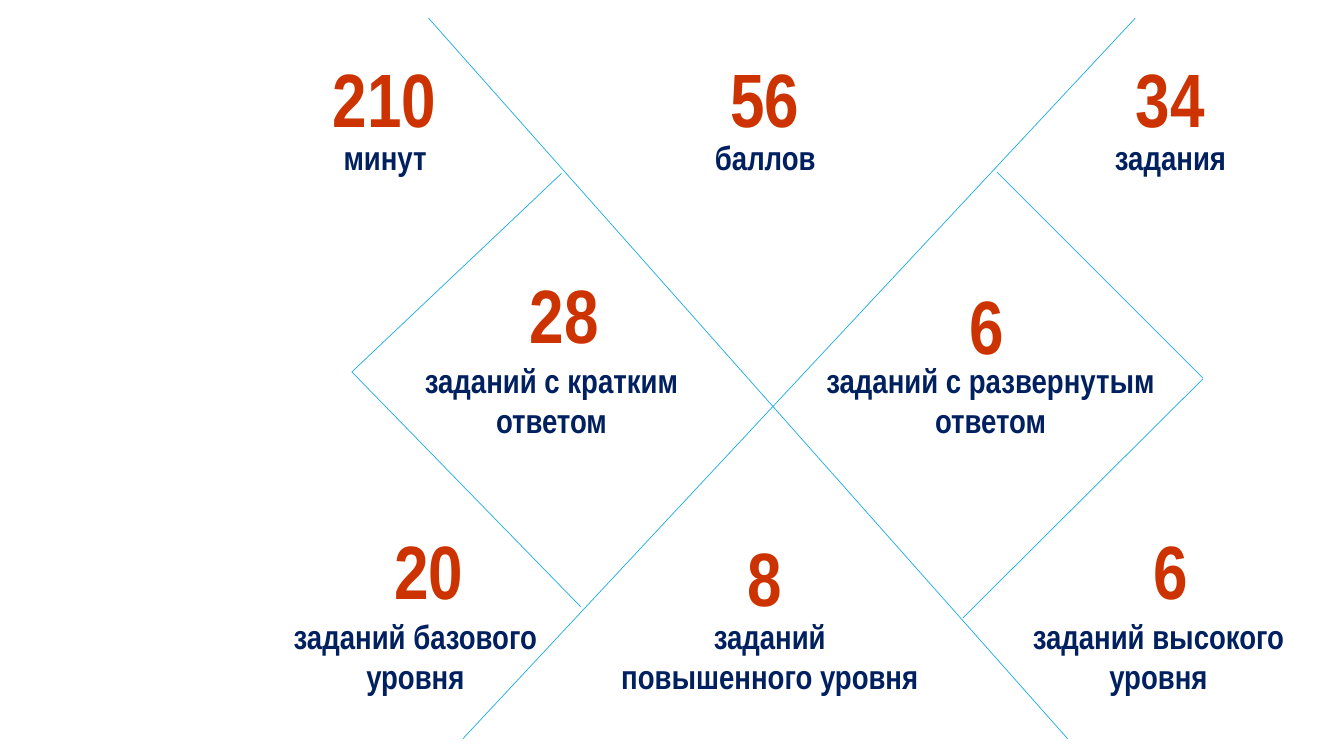
from dataclasses import dataclass

from lxml import etree
from pptx import Presentation
from pptx.dml.color import RGBColor
from pptx.enum import shapes, text
from pptx.oxml import ns
from pptx.util import Inches, Pt


@dataclass(frozen=True)
class Theme:
    font: str = "Arial Narrow"
    number: str = "CC3300"
    number_outline: str = "C00000"
    label: str = "002060"
    rule: str = "1CADE4"
    number_size: int = 54
    label_size: int = 24
    outline_width: float = 1
    rule_width: float = 0.5


THEME = Theme()
NUMBER_WIDTH, NUMBER_HEIGHT = 1.33, 1.01

# number, its left and top; caption, its left, top, width and height
FACTS = [
    ("210", 3.15, 0.47, "минут", 3.02, 1.31, 1.6, 0.5),
    ("56", 6.92, 0.47, "баллов", 6.79, 1.31, 1.6, 0.5),
    ("34", 10.94, 0.47, "задания", 10.81, 1.31, 1.6, 0.5),
    ("28", 4.93, 2.61, "заданий с кратким ответом", 3.97, 3.52, 3, 0.91),
    ("6", 9.12, 2.72, "заданий с развернутым ответом", 8.04, 3.52, 3.57, 0.91),
    ("20", 3.59, 5.15, "заданий базового уровня", 2.62, 6.06, 3, 0.91),
    ("8", 6.92, 5.22, "заданий повышенного уровня", 6.05, 6.06, 3.17, 0.91),
    ("6", 10.95, 5.15, "заданий высокого уровня", 9.99, 6.06, 3, 0.91),
]

# Start and end of each dividing line
DIVIDERS = [
    (4.25, 0.18, 10.59, 7.33),
    (11.26, 0.18, 4.59, 7.33),
    (5.57, 1.72, 3.49, 3.69),
    (3.49, 3.69, 5.76, 6.02),
    (9.89, 1.71, 11.93, 3.75),
    (9.55, 6.13, 11.93, 3.76),
]


def add_text(slide, wording, box, size, color):
    """Add a centred bold text box and return its run."""
    frame = slide.shapes.add_textbox(*map(Inches, box)).text_frame
    frame.word_wrap = True
    frame.auto_size = text.MSO_AUTO_SIZE.SHAPE_TO_FIT_TEXT
    paragraph = frame.paragraphs[0]
    paragraph.alignment = text.PP_ALIGN.CENTER
    run = paragraph.add_run()
    run.text = wording
    font_format = {"name": THEME.font, "size": Pt(size), "bold": True}
    for attribute, value in font_format.items():
        setattr(run.font, attribute, value)
    run.font.color.rgb = RGBColor.from_string(color)
    return run


def outline_text(run, color, width):
    outline = etree.Element(ns.qn("a:ln"), w=str(Pt(width)))
    fill = etree.SubElement(outline, ns.qn("a:solidFill"))
    etree.SubElement(fill, ns.qn("a:srgbClr"), val=color)
    run.font._element.insert(0, outline)


def add_fact(slide, number, left, top, caption, *caption_box):
    number_box = (left, top, NUMBER_WIDTH, NUMBER_HEIGHT)
    figure = add_text(slide, number, number_box, THEME.number_size, THEME.number)
    outline_text(figure, THEME.number_outline, THEME.outline_width)
    add_text(slide, caption, caption_box, THEME.label_size, THEME.label)


def add_divider(slide, ends):
    divider = slide.shapes.add_connector(
        shapes.MSO_CONNECTOR.STRAIGHT, *map(Inches, ends))
    divider.line.color.rgb = RGBColor.from_string(THEME.rule)
    divider.line.width = Pt(THEME.rule_width)
    etree.SubElement(divider._element.spPr, ns.qn("a:effectLst"))


def main():
    deck = Presentation()
    deck.slide_width, deck.slide_height = Inches(13.33), Inches(7.5)
    slide = deck.slides.add_slide(deck.slide_layouts[6])

    # Exam figures with captions
    for fact in FACTS:
        add_fact(slide, *fact)

    # Diagonal grid
    for ends in DIVIDERS:
        add_divider(slide, ends)

    deck.save("out.pptx")


if __name__ == "__main__":
    main()
